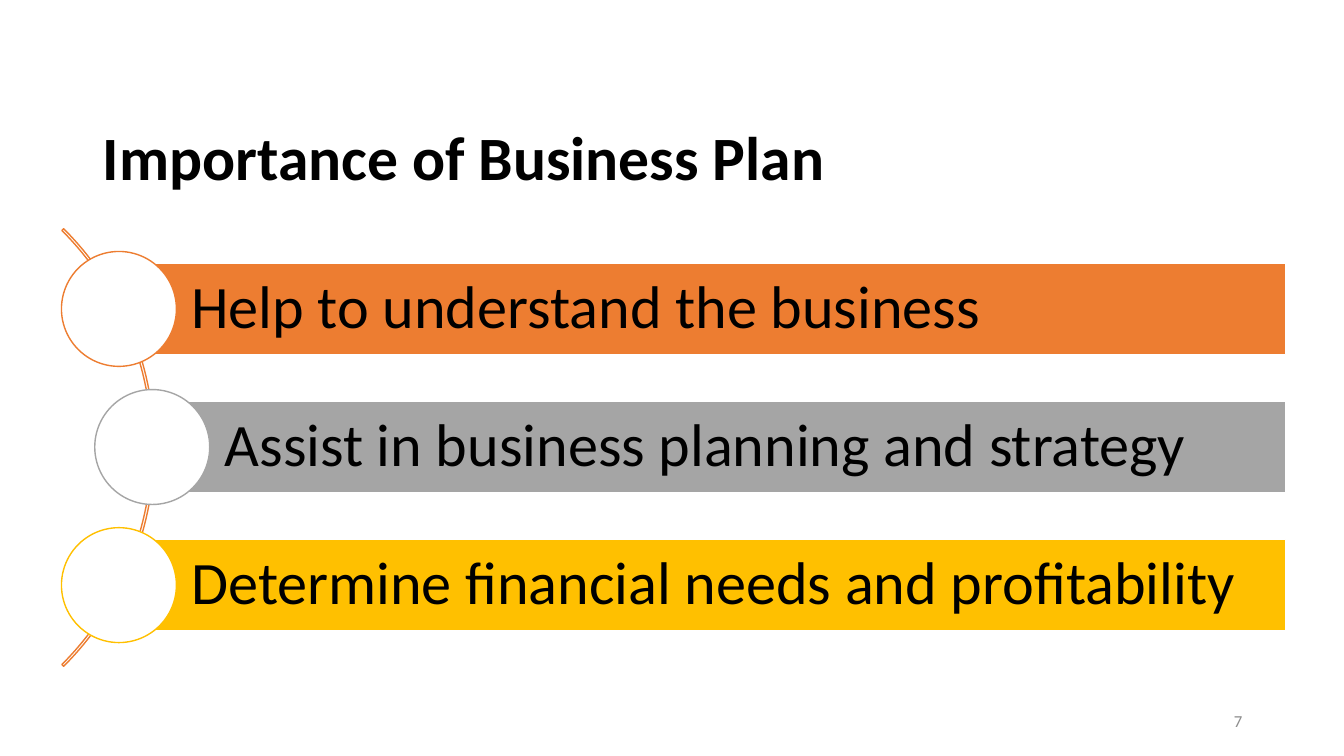
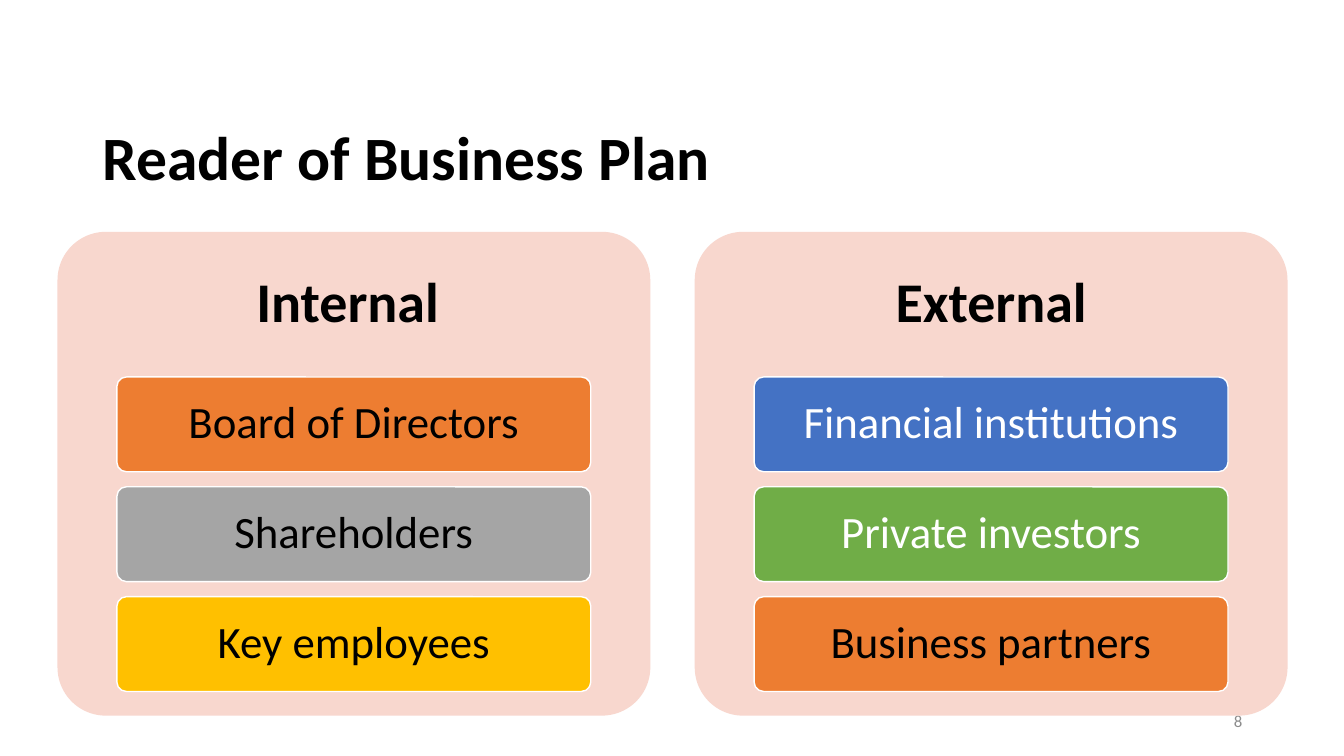
from pptx import Presentation
from pptx.dml.color import RGBColor
from pptx.enum.shapes import MSO_SHAPE as Shape
from pptx.enum.text import MSO_ANCHOR as Anchor, MSO_AUTO_SIZE as AutoSize, PP_ALIGN as Align
from pptx.util import Inches, Pt

FONT = "Calibri"
BLACK, WHITE, MUTED = "000000", "FFFFFF", "8C8C8C"
ORANGE, GRAY, GOLD = "ED7D31", "A5A5A5", "FFC000"
BLUE, GREEN, BLUSH = "4472C4", "70AD47", "F8D7CE"

REASONS = [
    ("Help to understand the business", ORANGE, 1.18),
    ("Assist in business planning and strategy", GRAY, 1.51),
    ("Determine financial needs and profitability", GOLD, 1.18),
]
READERS = [
    ("Internal ", [
        ("Board of Directors", ORANGE, BLACK),
        ("Shareholders", GRAY, BLACK),
        ("Key employees", GOLD, BLACK),
    ]),
    ("External", [
        ("Financial institutions", BLUE, WHITE),
        ("Private investors", GREEN, WHITE),
        ("Business partners", ORANGE, BLACK),
    ]),
]

BAR_TOP, BAR_HEIGHT, BAR_PITCH, BAR_RIGHT = 2.61, 0.91, 1.37, 12.75
CIRCLE = 1.14
PANEL_LEFT, PANEL_TOP, PANEL_WIDTH, PANEL_HEIGHT, PANEL_PITCH = 0.57, 2.3, 5.88, 4.8, 6.32
HEADING_HEIGHT = 1.44
CARD_WIDTH, CARD_HEIGHT, CARD_PITCH = 4.7, 0.94, 1.09


def rgb(value):
    return RGBColor.from_string(value)


def place(item, left, top, width, height):
    item.left, item.top = Inches(left), Inches(top)
    item.width, item.height = Inches(width), Inches(height)


def write(box, text, size, color=BLACK, bold=False, align=Align.LEFT,
          insets=(0.1, 0.05, 0.1, 0.05), spacing=0.9):
    frame = box.text_frame
    frame.word_wrap = True
    frame.auto_size = AutoSize.NONE
    frame.vertical_anchor = Anchor.MIDDLE
    (frame.margin_left, frame.margin_top,
     frame.margin_right, frame.margin_bottom) = map(Inches, insets)
    para = frame.paragraphs[0]
    para.alignment = align
    para.line_spacing = spacing
    span = para.add_run()
    span.text = text
    span.font.name = FONT
    span.font.size = Pt(size)
    span.font.bold = bold
    span.font.color.rgb = rgb(color)


def add_figure(page, kind, area, fill=None, line=None, adjustments=()):
    figure = page.shapes.add_shape(kind, *map(Inches, area))
    figure.shadow.inherit = False
    if fill:
        figure.fill.solid()
        figure.fill.fore_color.rgb = rgb(fill)
    else:
        figure.fill.background()
    if line:
        figure.line.color.rgb = rgb(line)
        figure.line.width = Pt(1)
    else:
        figure.line.fill.background()
    for index, value in enumerate(adjustments):
        figure.adjustments[index] = value
    return figure


def add_page(deck, title, number):
    page = deck.slides.add_slide(deck.slide_layouts[5])
    place(page.shapes.title, 0.92, 1.03, 10.84, 1.12)
    write(page.shapes.title, title, 44, bold=True)
    number_box = page.shapes.add_textbox(*map(Inches, (9.42, 6.95, 3, 0.4)))
    write(number_box, str(number), 12, MUTED, align=Align.RIGHT, spacing=1.0)
    return page


def add_reasons(page):
    add_figure(page, Shape.BLOCK_ARC, (-4.61, 1.37, 6.14, 6.14),
               line=ORANGE, adjustments=(189, 27, 0.004))
    for row, (text, color, left) in enumerate(REASONS):
        top = BAR_TOP + row * BAR_PITCH
        bar = add_figure(page, Shape.RECTANGLE,
                         (left, top, BAR_RIGHT - left, BAR_HEIGHT), color, WHITE)
        write(bar, text, 43, insets=(0.72, 0.12, 0.12, 0.12))
        circle_top = top + (BAR_HEIGHT - CIRCLE) / 2
        add_figure(page, Shape.OVAL,
                   (left - CIRCLE / 2, circle_top, CIRCLE, CIRCLE), WHITE, color)


def add_readers(page):
    for column, (heading, cards) in enumerate(READERS):
        left = PANEL_LEFT + column * PANEL_PITCH
        add_figure(page, Shape.ROUNDED_RECTANGLE,
                   (left, PANEL_TOP, PANEL_WIDTH, PANEL_HEIGHT), BLUSH, adjustments=(0.1,))
        heading_box = page.shapes.add_textbox(
            *map(Inches, (left, PANEL_TOP, PANEL_WIDTH, HEADING_HEIGHT)))
        write(heading_box, heading, 40, bold=True, align=Align.CENTER, insets=(0.17,) * 4)
        card_left = left + (PANEL_WIDTH - CARD_WIDTH) / 2
        for row, (text, fill, color) in enumerate(cards):
            card_top = PANEL_TOP + HEADING_HEIGHT + row * CARD_PITCH
            card = add_figure(page, Shape.ROUNDED_RECTANGLE,
                              (card_left, card_top, CARD_WIDTH, CARD_HEIGHT),
                              fill, WHITE, (0.1,))
            write(card, text, 32, color, align=Align.CENTER, insets=(0.09, 0.07, 0.09, 0.07))


def main():
    deck = Presentation()
    deck.slide_width, deck.slide_height = Inches(13.33), Inches(7.5)
    add_reasons(add_page(deck, "Importance of Business Plan", 7))
    add_readers(add_page(deck, "Reader of Business Plan", 8))
    deck.save("out.pptx")


if __name__ == "__main__":
    main()
